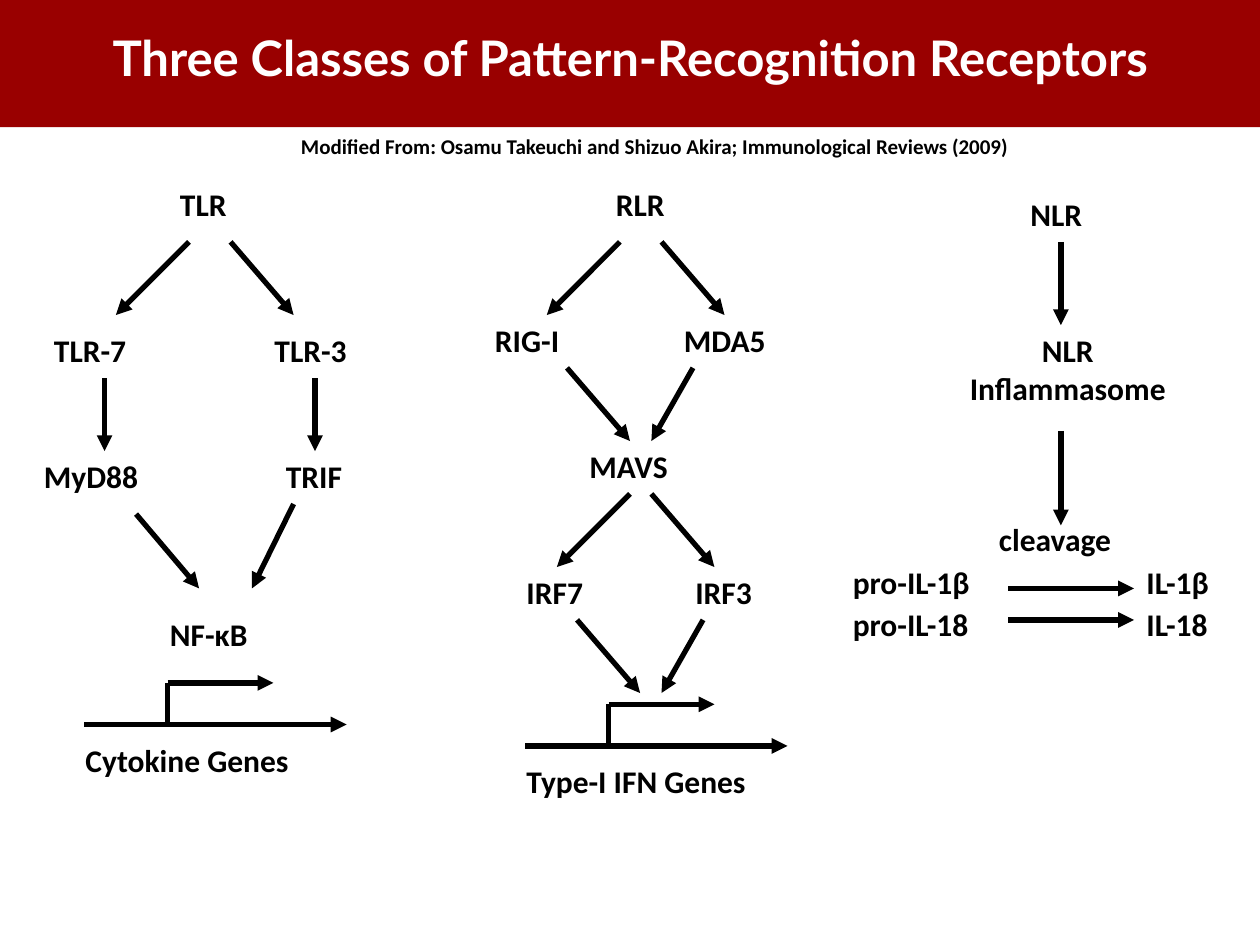
from pptx import Presentation
from pptx.dml.color import RGBColor
from pptx.enum.shapes import MSO_CONNECTOR
from pptx.enum.text import MSO_ANCHOR, MSO_AUTO_SIZE, PP_ALIGN
from pptx.oxml.ns import qn
from pptx.util import Inches, Pt
from lxml.etree import SubElement

THEME = {
    "banner": RGBColor(0x99, 0x00, 0x00),
    "ink": RGBColor(0x00, 0x00, 0x00),
    "line_width": Pt(3),
    "title": {"name": "Lato", "size": Pt(28), "bold": True},
    "label": {"name": "Calibri", "size": Pt(18), "bold": True},
    "citation": {"name": "Calibri", "size": Pt(12), "bold": True},
    "title_color": RGBColor(0xFF, 0xFF, 0xFF),
}

TITLE = "Three Classes of Pattern-Recognition Receptors"
CITATION = "Modified From: Osamu Takeuchi and Shizuo Akira; Immunological Reviews (2009)"

# text, left, top, width
LABELS = [
    ("TLR", 1.33, 1.42, 0.58),
    ("TLR-7", 0.33, 2.58, 0.78),
    ("TLR-3", 2.08, 2.58, 0.78),
    ("MyD88", 0.25, 3.58, 0.96),
    ("TRIF", 2.17, 3.58, 0.65),
    ("NF-κB", 1.25, 4.83, 0.82),
    ("RLR", 4.79, 1.42, 0.59),
    ("RIG-I", 3.83, 2.5, 0.72),
    ("MDA5", 5.33, 2.5, 0.86),
    ("MAVS", 4.58, 3.5, 0.83),
    ("IRF7", 4.08, 4.5, 0.65),
    ("IRF3", 5.42, 4.5, 0.65),
    ("NLR", 8.08, 1.5, 0.62),
    ("NLR\nInflammasome", 7.59, 2.58, 1.77),
    ("cleavage", 7.83, 4.08, 1.1),
]

# left, top, gap between the two tails
FORKS = [(1.5, 1.92, 0.33), (4.92, 1.92, 0.33), (5, 3.92, 0.17)]

# left, top
MERGES = [(4.5, 2.92), (4.58, 4.92)]

# start x, start y, end x, end y
ARROWS = [
    (0.83, 3, 0.83, 3.58),
    (2.5, 3, 2.5, 3.58),
    (1.08, 4.08, 1.58, 4.67),
    (2.33, 4, 2, 4.67),
    (8.42, 1.92, 8.42, 2.58),
    (8.42, 3.42, 8.42, 4.17),
]

# label, label width, line left, baseline
GENES = [
    ("Cytokine Genes", 1.83, 0.67, 5.75),
    ("Type-I IFN Genes", 1.96, 4.17, 5.92),
]

# precursor, width, product, width, label top, arrow height
CLEAVAGES = [
    ("pro-IL-1β", 1.15, "IL-1β", 0.72, 4.42, 4.67),
    ("pro-IL-18", 1.14, "IL-18", 0.71, 4.75, 4.92),
]


def format_paragraph(paragraph, style, color, alignment):
    paragraph.alignment = alignment
    for name, value in THEME[style].items():
        setattr(paragraph.font, name, value)
    paragraph.font.color.rgb = color


def add_title(slide):
    title = slide.shapes.title
    box = {"left": 0, "top": 0, "width": Inches(10), "height": Inches(1.01)}
    for name, value in box.items():
        setattr(title, name, value)
    title.fill.solid()
    title.fill.fore_color.rgb = THEME["banner"]
    frame = title.text_frame
    frame.text = TITLE
    layout = {"auto_size": MSO_AUTO_SIZE.NONE, "word_wrap": True,
              "vertical_anchor": MSO_ANCHOR.TOP, "margin_top": Inches(0.22)}
    for name, value in layout.items():
        setattr(frame, name, value)
    format_paragraph(frame.paragraphs[0], "title", THEME["title_color"], PP_ALIGN.CENTER)


def add_text(slide, text, left, top, width, style="label", wrap=False):
    lines = text.split("\n")
    height = {"label": 0.09 + 0.31 * len(lines), "citation": 0.3}[style]
    shape = slide.shapes.add_textbox(Inches(left), Inches(top), Inches(width), Inches(height))
    frame = shape.text_frame
    frame.word_wrap = wrap
    frame.text = text
    alignment = PP_ALIGN.CENTER if len(lines) > 1 else PP_ALIGN.LEFT
    for paragraph in frame.paragraphs:
        format_paragraph(paragraph, style, THEME["ink"], alignment)


def add_line(slide, start_x, start_y, end_x, end_y, arrow=True):
    points = [Inches(value) for value in (start_x, start_y, end_x, end_y)]
    connector = slide.shapes.add_connector(MSO_CONNECTOR.STRAIGHT, *points)
    connector.line.color.rgb = THEME["ink"]
    connector.line.width = THEME["line_width"]
    properties = connector._element.spPr
    if arrow:
        SubElement(properties.find(qn("a:ln")), qn("a:tailEnd"), type="triangle")
    SubElement(properties, qn("a:effectLst"))


def add_fork(slide, left, top, gap):
    add_line(slide, left, top, left - 0.58, top + 0.58)
    add_line(slide, left + gap, top, left + gap + 0.5, top + 0.58)


def add_merge(slide, left, top):
    add_line(slide, left, top, left + 0.5, top + 0.58)
    add_line(slide, left + 1, top, left + 0.67, top + 0.58)


def add_gene(slide, name, width, left, baseline):
    start, level = left + 0.66, baseline - 0.33
    add_line(slide, left, baseline, left + 2.08, baseline)
    add_line(slide, start, level, start + 0.84, level)
    add_line(slide, start, level, start, baseline, arrow=False)
    add_text(slide, name, left - 0.09, baseline + 0.08, width)


def add_cleavage(slide, precursor, precursor_width, product, product_width, top, level):
    add_text(slide, precursor, 6.67, top, precursor_width)
    add_line(slide, 8, level, 9, level)
    add_text(slide, product, 9, top, product_width)


def main():
    presentation = Presentation()
    presentation.slide_width = Inches(10)
    presentation.slide_height = Inches(7.5)
    slide = presentation.slides.add_slide(presentation.slide_layouts[5])
    add_title(slide)
    add_text(slide, CITATION, 2.29, 1.01, 5.92, "citation", wrap=True)
    parts = [(add_text, LABELS), (add_fork, FORKS), (add_merge, MERGES),
             (add_line, ARROWS), (add_gene, GENES), (add_cleavage, CLEAVAGES)]
    for add_part, rows in parts:
        for row in rows:
            add_part(slide, *row)
    presentation.save("out.pptx")


if __name__ == "__main__":
    main()
